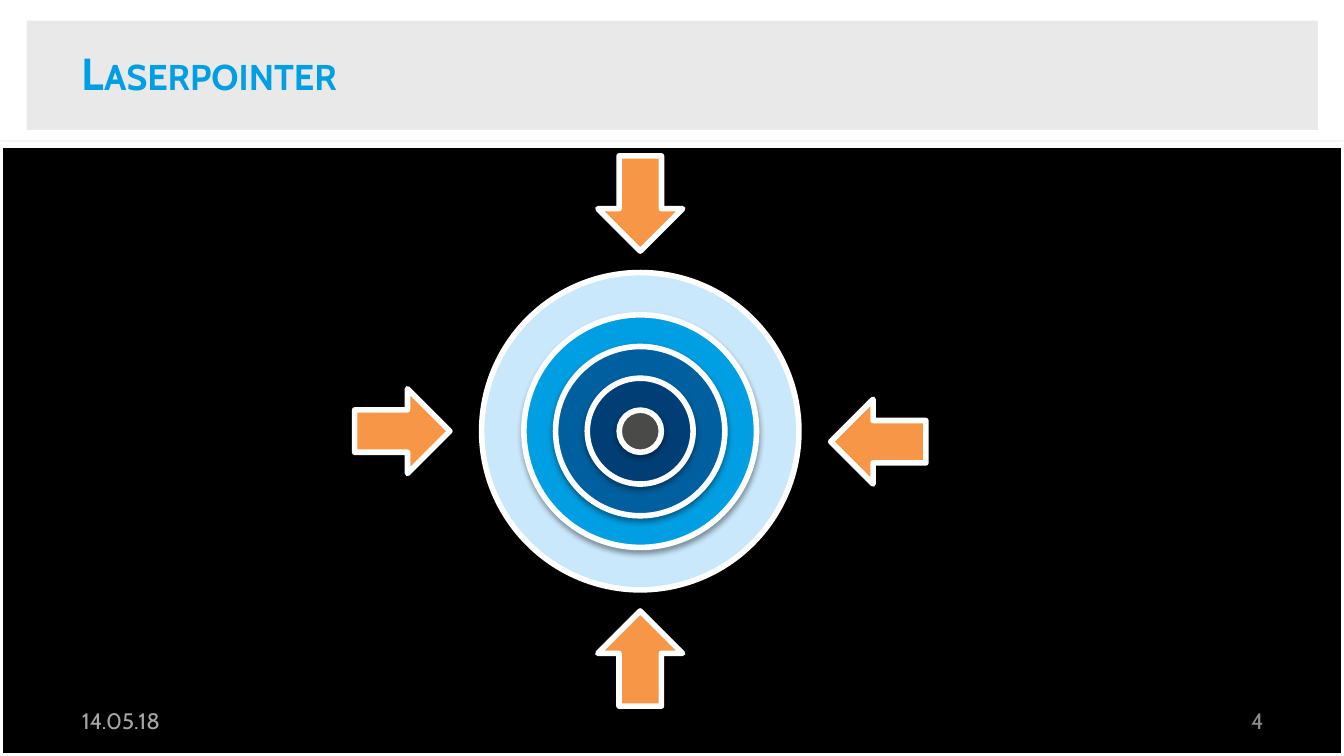
from pptx import Presentation
from pptx.util import Pt
from pptx.dml.color import RGBColor as RGB
from pptx.enum.shapes import MSO_SHAPE as Kind
from pptx.enum.text import MSO_ANCHOR as Anchor, PP_ALIGN as Align
from pptx.oxml import parse_xml
from pptx.oxml.ns import nsdecls

COLORS = {
    "band": "E9E9EA", "stage": "000000", "edge": "FFFFFF",
    "title": "009EE2", "date": "A6A6A6", "number": "8C8C8C",
    "arrow": "F79646",
}
SHADOW = (
    f'<a:effectLst {nsdecls("a")}>'
    '<a:outerShdw blurRad="40000" dist="20000" dir="5400000" rotWithShape="0">'
    '<a:srgbClr val="000000"><a:alpha val="38000"/></a:srgbClr>'
    '</a:outerShdw></a:effectLst>'
)

deck = Presentation()
deck.slide_width, deck.slide_height = Pt(720), Pt(405)
slide = deck.slides.add_slide(deck.slide_layouts[6])
shapes = slide.shapes


def add_shape(kind, x, y, w, h, fill):
    """Add a shape centred on x, y with white edge and soft shadow."""
    shape = shapes.add_shape(kind, Pt(x - w / 2), Pt(y - h / 2), Pt(w), Pt(h))
    shape.fill.solid()
    shape.fill.fore_color.rgb = RGB.from_string(fill)
    shape.line.color.rgb = RGB.from_string(COLORS["edge"])
    shape.line.width = Pt(3)
    shape._element.spPr.append(parse_xml(SHADOW))
    return shape


def add_text(text, x, y, w, h, size, color, align=Align.LEFT):
    """Add one line of text, centred vertically, and return its font."""
    frame = shapes.add_textbox(Pt(x), Pt(y), Pt(w), Pt(h)).text_frame
    frame.word_wrap = True
    frame.vertical_anchor = Anchor.MIDDLE
    frame.text = text
    line = frame.paragraphs[0]
    line.alignment = align
    font = line.runs[0].font
    font.name, font.size = "Cabin", Pt(size)
    font.color.rgb = RGB.from_string(color)
    return font


# Title band
band = shapes.add_shape(Kind.RECTANGLE, Pt(14.2), Pt(11.1), Pt(691.8), Pt(58.5))
band.fill.solid()
band.fill.fore_color.rgb = RGB.from_string(COLORS["band"])
band.line.fill.background()
band.shadow.inherit = False

# Black stage
stage = add_shape(Kind.ROUNDED_RECTANGLE, 360, 241.4, 720, 327.2, COLORS["stage"])
stage.adjustments[0] = 0

# Title, page number and date
font = add_text("Laserpointer", 36.8, 15.2, 493, 47, 24, COLORS["title"])
font.bold = True
font._element.set("cap", "small")
add_text("4", 516, 375.2, 168, 21.6, 12, COLORS["number"], Align.RIGHT)
add_text("14.05.18", 36.8, 375.2, 158.4, 21.6, 12, COLORS["date"])

# Target rings, from the outside in
MID_X, MID_Y = 343, 231
rings = [(170, "C9E8FB"), (124.6, "009EE2"), (90.7, "005F9F"),
         (56.7, "003E75"), (22.6, "4A4A49")]
for size, fill in rings:
    add_shape(Kind.OVAL, MID_X, MID_Y, size, size, fill)

# Arrows pointing at the target
arrows = [(215.5, MID_Y, 0), (470.5, 236.6, 180),
          (MID_X, 109, 90), (MID_X, 352.8, 270)]
for x, y, turn in arrows:
    arrow = add_shape(Kind.RIGHT_ARROW, x, y, 51, 45.4, COLORS["arrow"])
    arrow.rotation = turn

deck.save("out.pptx")
